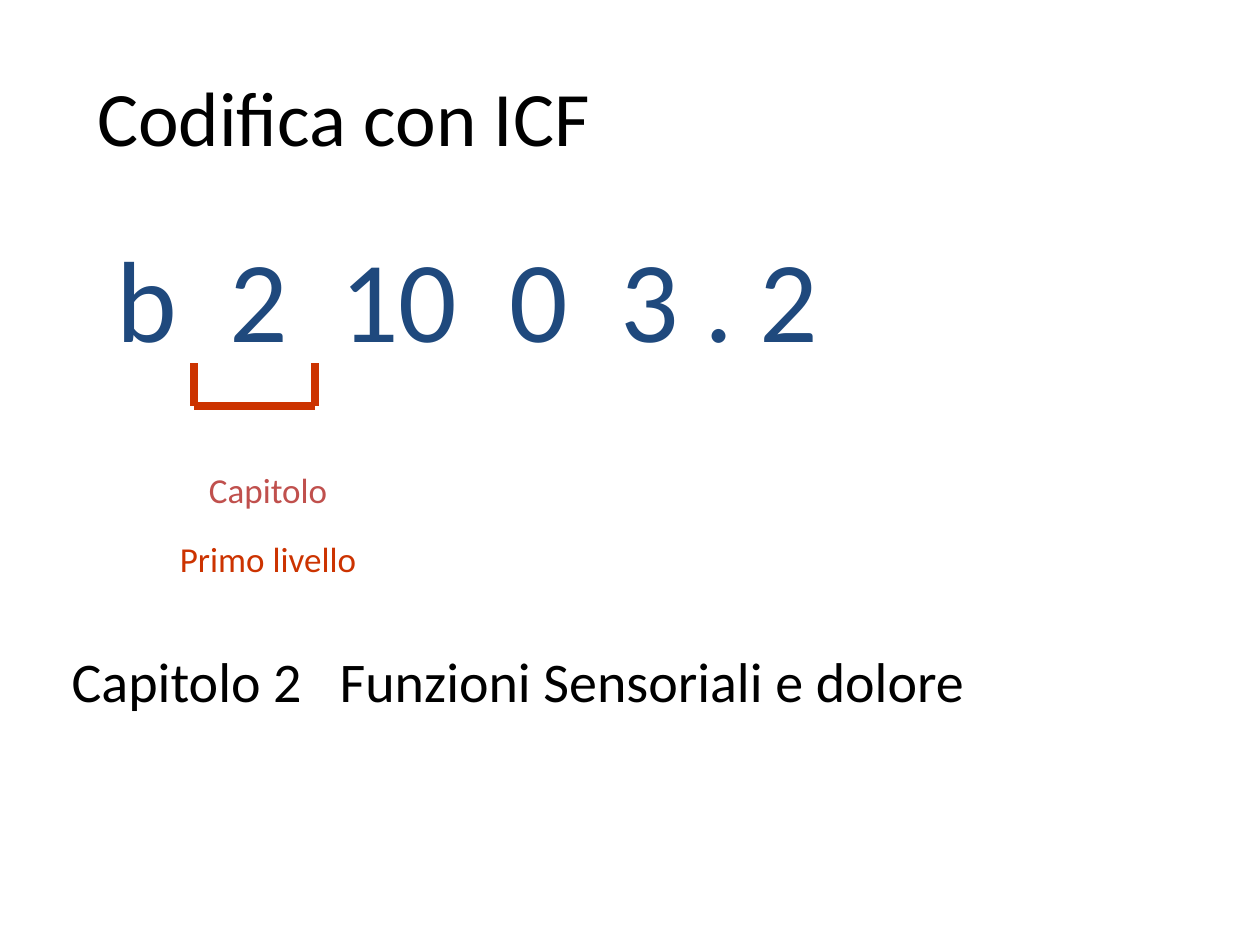
from dataclasses import dataclass

from lxml.etree import SubElement
from pptx import Presentation
from pptx.dml.color import RGBColor
from pptx.enum.shapes import MSO_CONNECTOR
from pptx.enum.text import MSO_ANCHOR, PP_ALIGN
from pptx.oxml.ns import qn
from pptx.shapes.group import GroupShape
from pptx.slide import Slide
from pptx.text.text import TextFrame
from pptx.util import Inches, Pt

BLACK = RGBColor(0x00, 0x00, 0x00)
WHITE = RGBColor(0xFF, 0xFF, 0xFF)
NAVY = RGBColor(0x1F, 0x49, 0x7D)
ORANGE_RED = RGBColor(0xCC, 0x33, 0x00)
BRICK = RGBColor(0xC0, 0x50, 0x4D)


@dataclass(frozen=True)
class Label:
    text: str
    left: float
    top: float
    width: float
    height: float
    size: int
    color: RGBColor


TITLE = Label("Codifica con ICF", 0.67, 0.42, 6.99, 1, 44, BLACK)
LABELS = (
    Label("b  2  10  0  3 . 2", 0.83, 1.75, 8.25, 1.25, 66, NAVY),
    Label("Primo livello", 1.33, 4.22, 2.5, 0.67, 20, ORANGE_RED),
    Label("Capitolo", 1.56, 3.67, 1.56, 0.67, 20, BRICK),
    Label("Capitolo 2   Funzioni Sensoriali e dolore", 0.47, 5.08, 8.75, 0.67, 32, BLACK),
)


def write_text(frame: TextFrame, label: Label) -> None:
    frame.word_wrap = True
    frame.text = label.text
    paragraph = frame.paragraphs[0]
    paragraph.alignment = PP_ALIGN.LEFT
    font = paragraph.runs[0].font
    font.name = "Calibri"
    font.size = Pt(label.size)
    font.color.rgb = label.color


def add_title(slide: Slide, label: Label) -> None:
    title = slide.shapes.title
    title.left, title.top = Inches(label.left), Inches(label.top)
    title.width, title.height = Inches(label.width), Inches(label.height)
    title.fill.solid()
    title.fill.fore_color.rgb = WHITE
    title.text_frame.vertical_anchor = MSO_ANCHOR.MIDDLE
    write_text(title.text_frame, label)


def add_label(slide: Slide, label: Label) -> None:
    box = slide.shapes.add_textbox(
        Inches(label.left), Inches(label.top), Inches(label.width), Inches(label.height)
    )
    write_text(box.text_frame, label)


def add_line(group: GroupShape, x1: float, y1: float, x2: float, y2: float) -> None:
    line = group.shapes.add_connector(
        MSO_CONNECTOR.STRAIGHT, Inches(x1), Inches(y1), Inches(x2), Inches(y2)
    )
    line.line.color.rgb = ORANGE_RED
    line.line.width = Pt(4.5)
    SubElement(line._element.spPr, qn("a:effectLst"))


def add_bracket(slide: Slide, left: float, right: float, top: float, bottom: float) -> None:
    """Draw an upward-opening bracket under the chapter digit."""
    bracket = slide.shapes.add_group_shape()
    add_line(bracket, left, bottom, right, bottom)
    for x in (right, left):
        add_line(bracket, x, bottom, x, top)


def main() -> None:
    presentation = Presentation()
    presentation.slide_width = Inches(10)
    presentation.slide_height = Inches(7.5)
    slide = presentation.slides.add_slide(presentation.slide_layouts.get_by_name("Title Only"))
    add_title(slide, TITLE)
    add_bracket(slide, left=1.54, right=2.5, top=2.88, bottom=3.22)
    for label in LABELS:
        add_label(slide, label)
    presentation.save("out.pptx")


if __name__ == "__main__":
    main()
